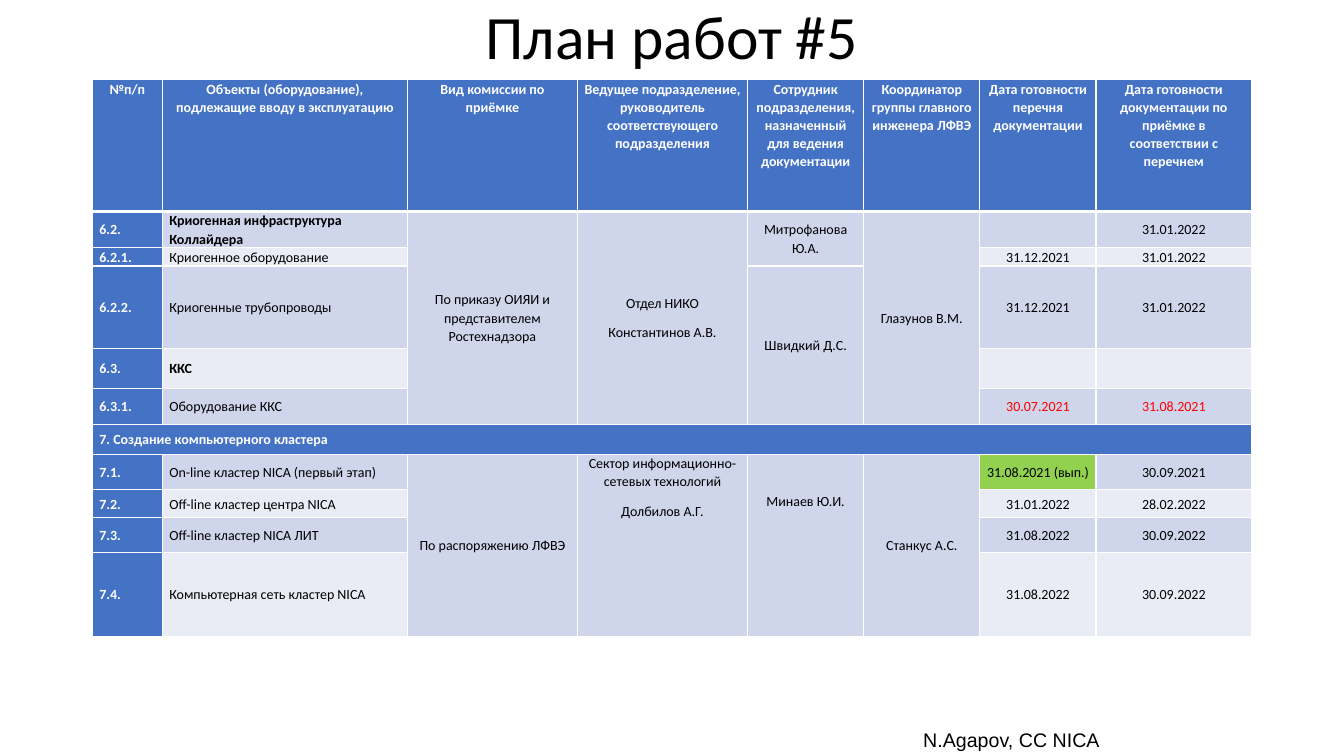
from lxml import etree
from pptx import Presentation
from pptx import util as u
from pptx.dml.color import RGBColor
from pptx.enum import text as t
from pptx.oxml.ns import qn

BLUE, DARK_BAND, LIGHT_BAND, GREEN = "4472C4", "CFD5EA", "E9EBF5", "92D050"
WHITE, BLACK, RED = "FFFFFF", "000000", "FF0000"

COLUMN_WIDTHS = [50, 175, 121.5, 121.5, 83, 83, 83, 111]
ROW_HEIGHTS = [94, 26, 13, 59, 28.5, 25.5, 21.5, 25.5, 20, 24.5, 60.5]
HEADERS = [
    "№п/п",
    "Объекты (оборудование), подлежащие вводу в эксплуатацию",
    "Вид комиссии по приёмке",
    "Ведущее подразделение, руководитель соответствующего подразделения",
    "Сотрудник подразделения, назначенный для ведения документации",
    "Координатор группы главного инженера ЛФВЭ",
    "Дата готовности перечня документации",
    "Дата готовности документации по приёмке в соответствии с перечнем",
]
# Number, equipment, date of the list, date of the documents
WORKS = [
    ("6.2.", "Криогенная инфраструктура Коллайдера", "", "31.01.2022"),
    ("6.2.1.", "Криогенное оборудование", "31.12.2021", "31.01.2022"),
    ("6.2.2.", "Криогенные трубопроводы", "31.12.2021", "31.01.2022"),
    ("6.3.", "ККС", "", ""),
    ("6.3.1.", "Оборудование ККС", "30.07.2021", "31.08.2021"),
    ("7. Создание компьютерного кластера", "", "", ""),
    ("7.1.", "On-line кластер NICA (первый этап)", "31.08.2021 (вып.)", "30.09.2021"),
    ("7.2.", "Off-line кластер центра NICA", "31.01.2022", "28.02.2022"),
    ("7.3.", "Off-line кластер NICA ЛИТ", "31.08.2022", "30.09.2022"),
    ("7.4.", "Компьютерная сеть кластер NICA", "31.08.2022", "30.09.2022"),
]
SECTION_ROW = 6
BOLD_WORKS = {"6.2.", "6.3."}
OVERDUE_WORKS = {"6.3.1."}
# First row, last row, column, paragraphs, format
SHARED_CELLS = [
    (1, 5, 2, "По приказу ОИЯИ и представителем Ростехнадзора", {}),
    (1, 5, 3, "Отдел НИКО\nКонстантинов А.В.", {}),
    (1, 2, 4, "Митрофанова Ю.А.", {}),
    (3, 5, 4, "Швидкий Д.С.", {}),
    (1, 5, 5, "Глазунов В.М.", {}),
    (7, 10, 2, "По распоряжению ЛФВЭ", {}),
    (7, 10, 3, "Сектор информационно-сетевых технологий\nДолбилов А.Г.", {"anchor": "top"}),
    (7, 10, 4, "Минаев Ю.И.", {"anchor": "top", "top": 27}),
    (7, 10, 5, "Станкус А.С.", {}),
]


def colour(value):
    return RGBColor.from_string(value)


def write(frame, words, size=10, font="Calibri", ink=BLACK, bold=False,
          align="CENTER", spacing=1.0, after=0):
    """Fill a text frame, one paragraph per line of words."""
    frame.text = words
    for para in frame.paragraphs:
        para.alignment = t.PP_ALIGN[align]
        para.line_spacing = spacing
        para.space_after = u.Pt(after)
        spans = para.runs
        for face in [span.font for span in spans] or [para.font]:
            face.size, face.name, face.bold = u.Pt(size), font, bold
            face.color.rgb = colour(ink)
        if not spans:
            end = etree.SubElement(para._p, qn("a:endParaRPr"))
            end.set("sz", str(size * 100))


def draw_borders(cell, top=1, bottom=1):
    props = cell._tc.get_or_add_tcPr()
    for side, width in (("L", 1), ("R", 1), ("T", top), ("B", bottom)):
        line = etree.SubElement(props, qn(f"a:ln{side}"), w=str(u.Pt(width)))
        solid = etree.SubElement(line, qn("a:solidFill"))
        etree.SubElement(solid, qn("a:srgbClr"), val=WHITE)


def set_cell(cell, words, fill, anchor="middle", side=5, top=0, **style):
    cell.margin_left = cell.margin_right = u.Pt(side)
    cell.margin_top, cell.margin_bottom = u.Pt(top), 0
    cell.vertical_anchor = t.MSO_ANCHOR[anchor.upper()]
    cell.fill.solid()
    cell.fill.fore_color.rgb = colour(fill)
    write(cell.text_frame, words, spacing=1.07, after=8, **style)


def add_title(page, left, top, width, height):
    title = page.shapes.title
    title.left, title.top, title.width, title.height = map(u.Pt, (left, top, width, height))
    frame = title.text_frame
    frame.auto_size = t.MSO_AUTO_SIZE.NONE
    frame.vertical_anchor = t.MSO_ANCHOR.MIDDLE
    write(frame, "План работ #5", size=44, spacing=0.9)


def add_plan(page, left, top):
    shape = page.shapes.add_table(
        len(ROW_HEIGHTS), len(COLUMN_WIDTHS), u.Pt(left), u.Pt(top),
        u.Pt(sum(COLUMN_WIDTHS)), u.Pt(sum(ROW_HEIGHTS)))
    table = shape.table
    table.first_row = table.horz_banding = False
    for column, width in zip(table.columns, COLUMN_WIDTHS):
        column.width = u.Pt(width)
    for index, (row, height) in enumerate(zip(table.rows, ROW_HEIGHTS)):
        row.height = u.Pt(height)
        for cell in row.cells:
            draw_borders(cell, top=3 if index == 1 else 1, bottom=3 if index == 0 else 1)
            set_cell(cell, "", DARK_BAND if index % 2 else LIGHT_BAND)

    for column, words in enumerate(HEADERS):
        set_cell(table.cell(0, column), words, BLUE, anchor="top", side=4.3,
                 ink=WHITE, bold=True)
    for row, (number, item, *dates) in enumerate(WORKS, 1):
        set_cell(table.cell(row, 0), number, BLUE, ink=WHITE, bold=True, align="LEFT")
        if row == SECTION_ROW:
            table.cell(row, 0).merge(table.cell(row, len(HEADERS) - 1))
            continue
        band = DARK_BAND if row % 2 else LIGHT_BAND
        set_cell(table.cell(row, 1), item, band, bold=number in BOLD_WORKS, align="LEFT")
        for column, date in enumerate(dates, 6):
            set_cell(table.cell(row, column), date, GREEN if "вып." in date else band,
                     ink=RED if number in OVERDUE_WORKS else BLACK)
    for first, last, column, words, style in SHARED_CELLS:
        cell = table.cell(first, column)
        cell.merge(table.cell(last, column))
        set_cell(cell, words, DARK_BAND, **style)


def add_author(page, left, top, width, height):
    box = page.shapes.add_textbox(*map(u.Pt, (left, top, width, height)))
    frame = box.text_frame
    frame.word_wrap = True
    frame.vertical_anchor = t.MSO_ANCHOR.BOTTOM
    write(frame, "N.Agapov, CC NICA", size=14, font="Arial")


def main():
    deck = Presentation()
    deck.slide_width, deck.slide_height = u.Pt(960), u.Pt(540)
    page = deck.slides.add_slide(deck.slide_layouts[5])
    add_plan(page, 66, 57)
    add_title(page, 66, 0.7, 828, 55.5)
    add_author(page, 608.5, 502.5, 228, 37.5)
    deck.save("out.pptx")


if __name__ == "__main__":
    main()
